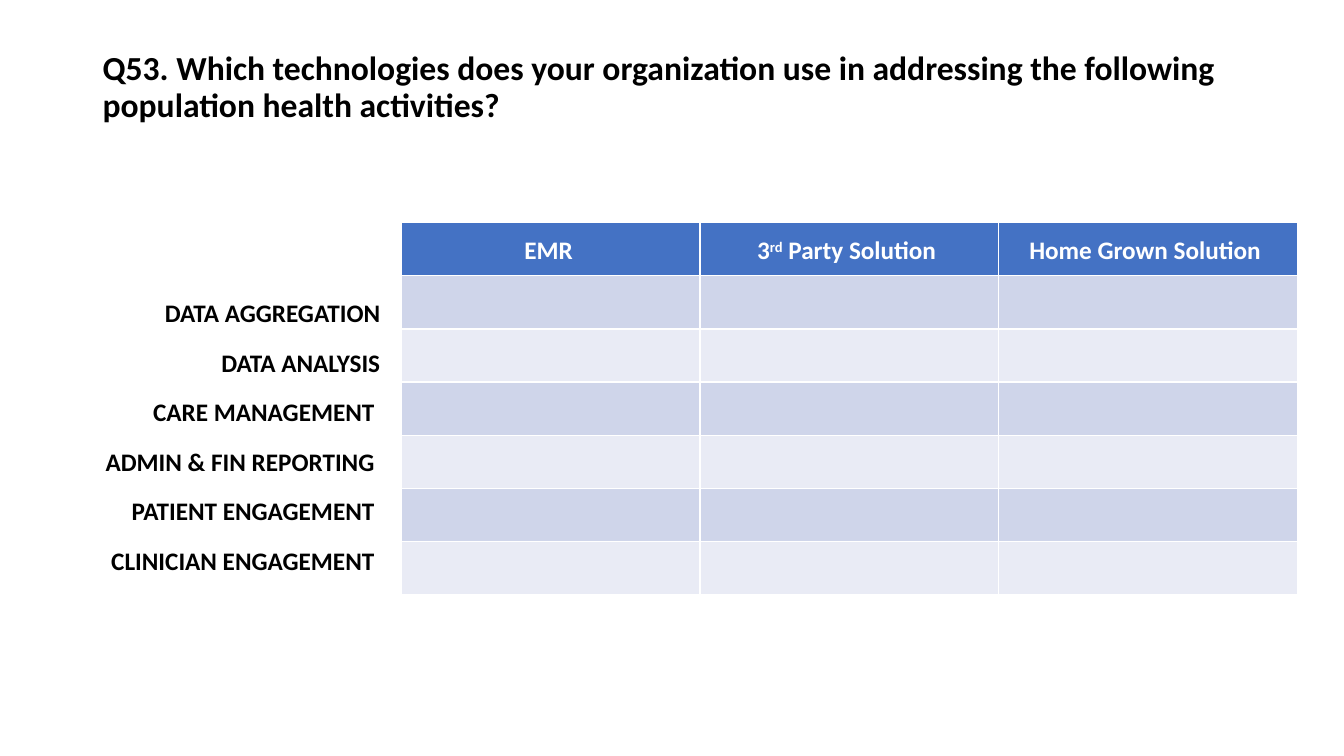
from pptx import Presentation
from pptx.dml.color import RGBColor
from pptx.enum.text import MSO_ANCHOR, PP_ALIGN
from pptx.util import Inches, Pt

COLORS = {
    "text": "000000",
    "header_text": "FFFFFF",
    "header": "4472C4",
    "band_dark": "CFD5EA",
    "band_light": "E9EBF5",
}
FONT = "Calibri"
QUESTION = ("Q53. Which technologies does your organization use in addressing "
            "the following population health activities?")
ACTIVITIES = [
    "DATA AGGREGATION",
    "DATA ANALYSIS",
    "CARE MANAGEMENT ",
    "ADMIN & FIN REPORTING ",
    "PATIENT ENGAGEMENT ",
    "CLINICIAN ENGAGEMENT ",
]
# Left offset in the table, width, alignment, runs as (text, is superscript)
SOLUTIONS = [
    (0.89, 1.2, PP_ALIGN.CENTER, [("EMR ", False)]),
    (3.31, 2.27, PP_ALIGN.CENTER,
     [("3", False), ("rd", True), (" Party Solution ", False)]),
    (6.13, 2.62, PP_ALIGN.LEFT, [("Home Grown Solution", False)]),
]


def add_text(shapes, box, runs, size, color, align=PP_ALIGN.LEFT,
             anchor=MSO_ANCHOR.TOP):
    """Add a bold one-paragraph text box and return its paragraph."""
    tf = shapes.add_textbox(*map(Inches, box)).text_frame
    tf.word_wrap = True
    tf.vertical_anchor = anchor
    p = tf.paragraphs[0]
    p.alignment = align
    for text, superscript in runs:
        r = p.add_run()
        r.text = text
        r.font.name = FONT
        r.font.size = Pt(size)
        r.font.bold = True
        r.font.color.rgb = RGBColor.from_string(COLORS[color])
        if superscript:
            r._r.get_or_add_rPr().set("baseline", "30000")
    return p


def add_title(s, box):
    p = add_text(s.shapes, box, [(QUESTION, False)], 24, "text",
                 anchor=MSO_ANCHOR.MIDDLE)
    p.line_spacing = 0.9


def add_answer_grid(s, box):
    """Add the empty answer table with its column headings on top."""
    left, top, width, height = box
    rows = len(ACTIVITIES) + 1
    table = s.shapes.add_table(rows, len(SOLUTIONS), *map(Inches, box)).table
    for row_index, row in enumerate(table.rows):
        row.height = Inches(height / rows)
        if row_index == 0:
            fill = "header"
        else:
            fill = "band_dark" if row_index % 2 else "band_light"
        for cell in row.cells:
            cell.fill.solid()
            cell.fill.fore_color.rgb = RGBColor.from_string(COLORS[fill])
    for offset, label_width, align, runs in SOLUTIONS:
        add_text(s.shapes, (left + offset, top + 0.07, label_width, 0.4),
                 runs, 18, "header_text", align)


def add_activity_labels(s, box):
    """Add the row labels as one group, evenly spaced down the box."""
    left, top, width, height = box
    label_height = 0.4
    pitch = (height - label_height) / (len(ACTIVITIES) - 1)
    group = s.shapes.add_group_shape()
    for i, activity in enumerate(ACTIVITIES):
        add_text(group.shapes, (left, top + i * pitch, width, label_height),
                 [(activity, False)], 18, "text", PP_ALIGN.RIGHT)


def main():
    prs = Presentation()
    prs.slide_width = Inches(13.33)
    prs.slide_height = Inches(7.5)
    s = prs.slides.add_slide(prs.slide_layouts[6])
    add_answer_grid(s, (3.98, 2.21, 8.89, 3.69))
    add_title(s, (0.92, 0.4, 11.5, 0.95))
    add_activity_labels(s, (0.86, 2.9, 3.01, 2.86))
    prs.save("out.pptx")


if __name__ == "__main__":
    main()
